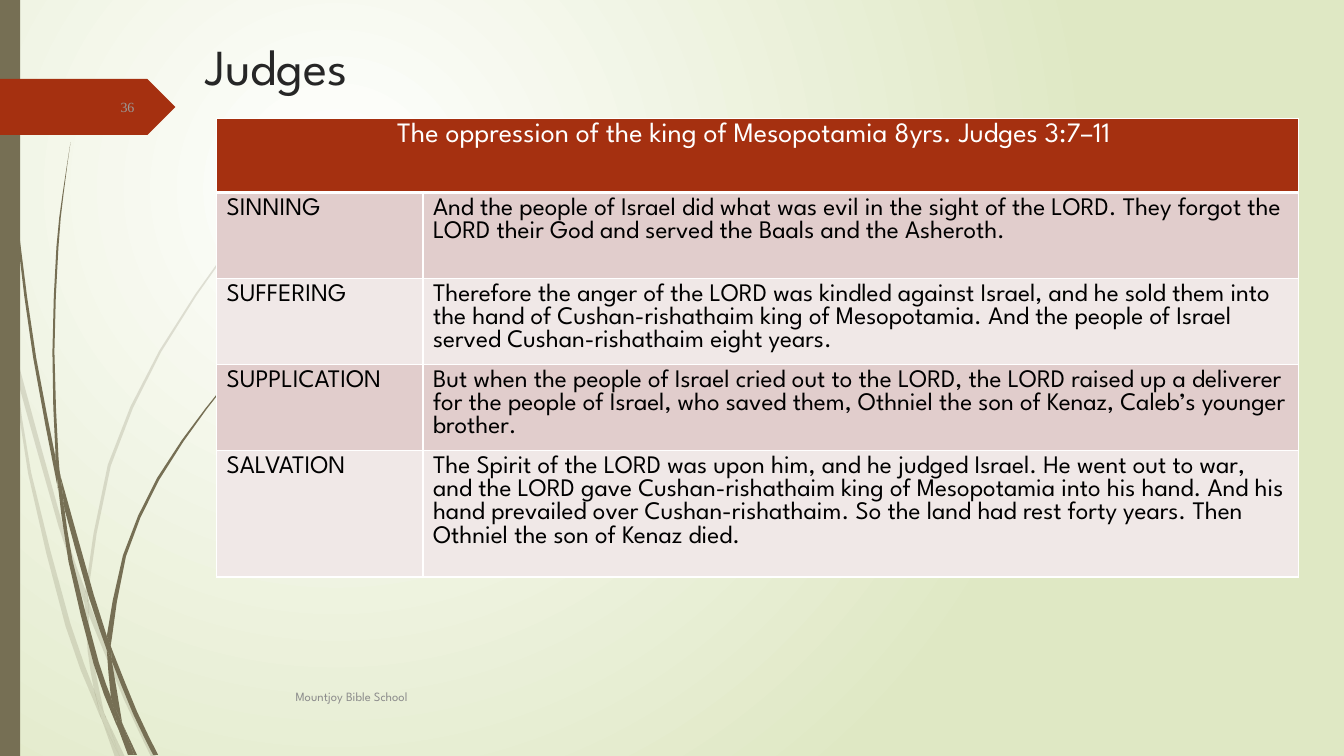
import pptx
import pptx.dml.color
import pptx.enum.shapes
import pptx.enum.text
import pptx.oxml
import pptx.oxml.ns
import pptx.util

Cm = pptx.util.Cm
Pt = pptx.util.Pt
qn = pptx.oxml.ns.qn
SHAPES = pptx.enum.shapes.MSO_SHAPE
ALIGN = pptx.enum.text.PP_ALIGN
ANCHOR = pptx.enum.text.MSO_ANCHOR
NAMESPACE = pptx.oxml.ns.nsdecls("a")
FONT = "League Spartan"
COLORS = {
    "white": "FFFFFF", "background": "DFE8C4", "grass": "766F54", "accent": "A53010",
    "title": "262626", "number": "9B9A98", "footer": "8C8C8C", "text": "000000",
    "band dark": "E1CDCC", "band light": "F0E8E7",
}


def rgb(name):
    return pptx.dml.color.RGBColor.from_string(COLORS[name])


def smooth(points):
    padded = [points[0], *points, points[-1]]
    curve = [points[0]]
    for before, start, end, after in zip(padded, padded[1:], padded[2:], padded[3:]):
        middle = tuple((9 * (b + c) - a - d) / 16
                       for a, b, c, d in zip(before, start, end, after))
        curve += [middle, end]
    return curve


presentation = pptx.Presentation()
presentation.slide_width = Cm(33.87)
presentation.slide_height = Cm(19.05)
slide = presentation.slides.add_slide(presentation.slide_layouts[5])

background = slide.background.fill
background.gradient()
for stop, name in zip(background.gradient_stops, ("white", "background")):
    stop.color.rgb = rgb(name)
gradient = slide.element.find(".//" + qn("a:gradFill"))
gradient.remove(gradient.find(qn("a:lin")))
gradient.append(pptx.oxml.parse_xml(
    f'<a:path {NAMESPACE} path="circle">'
    '<a:fillToRect l="50000" t="50000" r="100000" b="100000"/></a:path>'))

pale_blades = [
    ([(0, 282), (9, 322), (11, 350)], [(0, 299), (10, 344), (11, 350)]),
    ([(14, 345), (62, 520), (85, 586)], [(17, 376), (58, 522), (84, 599)]),
    ([(88, 596), (92, 607), (127, 692), (155, 751)], [(88, 610), (123, 694), (150, 751)]),
    ([(105, 711), (124, 751)], [(105, 711), (119, 751)]),
    ([(11, 350), (17, 376), (31, 469), (70, 619), (93, 683), (99, 707), (101, 714)],
     [(11, 350), (28, 470), (65, 621), (92, 693), (101, 714)]),
    ([(84, 599), (88, 608), (88, 610), (91, 646), (103, 706), (105, 711)],
     [(84, 599), (87, 646), (93, 683), (96, 692), (105, 711)]),
    ([(312, 153), (289, 175), (268, 197), (228, 244), (158, 348), (107, 461), (85, 584),
      (85, 586)],
     [(312, 154), (290, 175), (268, 198), (229, 245), (160, 349), (110, 462), (88, 584),
      (88, 596)]),
    ([(101, 714), (119, 751)], [(101, 714), (114, 751)]),
    ([(85, 586), (88, 596), (88, 610)], [(84, 599), (88, 608)]),
    ([(93, 683), (96, 692), (105, 711), (119, 751)], [(93, 683), (99, 707), (101, 714), (119, 751)]),
]
dark_blades = [
    ([(3, 0), (4, 48), (7, 110), (17, 233), (33, 355), (56, 477), (57, 481)],
     [(4, 0), (5, 48), (8, 109), (19, 232), (36, 355), (55, 453), (57, 481)]),
    ([(60, 472), (93, 590), (106, 631), (106, 645)], [(64, 505), (88, 592), (106, 645)]),
    ([(110, 641), (113, 649), (136, 706), (157, 749)], [(111, 656), (132, 708), (152, 749)]),
    ([(57, 477), (64, 505), (72, 556), (98, 657), (110, 691), (116, 717), (117, 722)],
     [(57, 477), (68, 557), (93, 659), (111, 708), (117, 722)]),
    ([(70, 141), (62, 193), (56, 245), (52, 349), (55, 449), (60, 472)],
     [(70, 141), (63, 193), (58, 245), (54, 349), (58, 453), (60, 472)]),
    ([(122, 719), (136, 749)], [(122, 719), (133, 749)]),
    ([(55, 449), (60, 472), (64, 505)], [(55, 453), (57, 477), (64, 505)]),
    ([(260, 344), (245, 358), (231, 373), (204, 405), (156, 474), (122, 551), (106, 631)],
     [(261, 344), (245, 359), (231, 374), (205, 406), (158, 476), (125, 552), (111, 633),
      (110, 641)]),
    ([(117, 722), (131, 749)], [(117, 722), (127, 749)]),
    ([(106, 645), (109, 651), (111, 656), (121, 716), (122, 719)],
     [(106, 645), (110, 691), (116, 706), (122, 719)]),
    ([(106, 631), (110, 641), (111, 656)], [(106, 645), (109, 651), (111, 656)]),
    ([(110, 691), (116, 706), (122, 719), (133, 749)],
     [(110, 691), (116, 717), (117, 722), (130, 749)]),
]
decorations = []
for opacity, blades in [(20, pale_blades), (100, dark_blades)]:
    for right_edge, left_edge in blades:
        edges = smooth(right_edge) + smooth(left_edge)[::-1]
        outline = list(dict.fromkeys((x * 10, y * 10) for x, y in edges))
        builder = slide.shapes.build_freeform(*outline[0], scale=Cm(2.54) / 1000)
        builder.add_line_segments(outline[1:], close=True)
        decorations.append((builder.convert_to_shape(), "grass", opacity))

side_bar = slide.shapes.add_shape(SHAPES.RECTANGLE, 0, 0, Cm(0.51), Cm(19.05))
number_tag = slide.shapes.add_shape(SHAPES.PENTAGON, 0, Cm(1.99), Cm(4.42), Cm(1.41))
decorations += [(side_bar, "grass", 100), (number_tag, "accent", 100)]
for shape, color, opacity in decorations:
    shape.shadow.inherit = False
    shape.fill.solid()
    shape.fill.fore_color.rgb = rgb(color)
    shape.line.fill.background()
    if opacity < 100:
        shape.element.spPr.find(".//" + qn("a:srgbClr")).append(
            pptx.oxml.parse_xml(f'<a:alpha {NAMESPACE} val="{opacity * 1000}"/>'))

title = slide.shapes.title
title.left, title.top, title.width, title.height = Cm(4.93), Cm(0.76), Cm(24), Cm(3.18)
number_box = slide.shapes.add_textbox(Cm(1.48), Cm(2.18), Cm(2.16), Cm(1.02))
footer_box = slide.shapes.add_textbox(Cm(7.2), Cm(17.04), Cm(21.16), Cm(1.02))
for shape, text, font, size, color, align, anchor in [
    (title, "Judges", FONT, 36, "title", ALIGN.LEFT, ANCHOR.TOP),
    (number_box, "36", "Times New Roman", 10, "number", ALIGN.RIGHT, ANCHOR.MIDDLE),
    (footer_box, "Mountjoy Bible School", FONT, 9, "footer", ALIGN.LEFT, ANCHOR.MIDDLE),
]:
    frame = shape.text_frame
    frame.text = text
    frame.word_wrap = True
    frame.auto_size = pptx.enum.text.MSO_AUTO_SIZE.NONE
    frame.vertical_anchor = anchor
    paragraph = frame.paragraphs[0]
    paragraph.alignment = align
    paragraph.font.name = font
    paragraph.font.size = Pt(size)
    paragraph.font.color.rgb = rgb(color)

rows = [
    ("The oppression of the king of Mesopotamia 8yrs. Judges 3:7–11 ", ""),
    ("SINNING", "And the people of Israel did what was evil in the sight of the LORD. "
     "They forgot the LORD their God and served the Baals and the Asheroth."),
    ("SUFFERING", "Therefore the anger of the LORD was kindled against Israel, and he sold "
     "them into the hand of Cushan-rishathaim king of Mesopotamia. And the people of Israel "
     "served Cushan-rishathaim eight years."),
    ("SUPPLICATION", "But when the people of Israel cried out to the LORD, the LORD raised up "
     "a deliverer for the people of Israel, who saved them, Othniel the son of Kenaz, "
     "Caleb’s younger brother."),
    ("SALVATION", "The Spirit of the LORD was upon him, and he judged Israel. He went out to "
     "war, and the LORD gave Cushan-rishathaim king of Mesopotamia into his hand. And his hand "
     "prevailed over Cushan-rishathaim. So the land had rest forty years. Then Othniel the son "
     "of Kenaz died."),
]
row_heights = [1.87, 2.17, 2.17, 2.17, 3.18]
column_widths = [5.2, 22.06]
table = slide.shapes.add_table(len(rows), 2, Cm(5.46), Cm(2.98), Cm(sum(column_widths)),
                               Cm(sum(row_heights))).table
for column, width in zip(table.columns, column_widths):
    column.width = Cm(width)
for row, height in zip(table.rows, row_heights):
    row.height = Cm(height)
table.cell(0, 0).merge(table.cell(0, 1))

for row_index, texts in enumerate(rows):
    header = row_index == 0
    fill = "accent" if header else ("band light", "band dark")[row_index % 2]
    border_widths = {"L": 1, "R": 1, "T": 3 if row_index == 1 else 1, "B": 3 if header else 1}
    for column_index, text in enumerate(texts):
        cell = table.cell(row_index, column_index)
        properties = cell._tc.get_or_add_tcPr()
        for side, width in border_widths.items():
            properties.append(pptx.oxml.parse_xml(
                f'<a:ln{side} {NAMESPACE} w="{Pt(width)}"><a:solidFill>'
                f'<a:srgbClr val="{COLORS["white"]}"/></a:solidFill></a:ln{side}>'))
        cell.fill.solid()
        cell.fill.fore_color.rgb = rgb(fill)
        cell.text = text
        paragraph = cell.text_frame.paragraphs[0]
        paragraph.alignment = ALIGN.CENTER if header else ALIGN.LEFT
        paragraph.font.name = FONT
        paragraph.font.size = Pt(20 if header else 18)
        paragraph.font.bold = False
        paragraph.font.color.rgb = rgb("white" if header else "text")

presentation.save("out.pptx")
